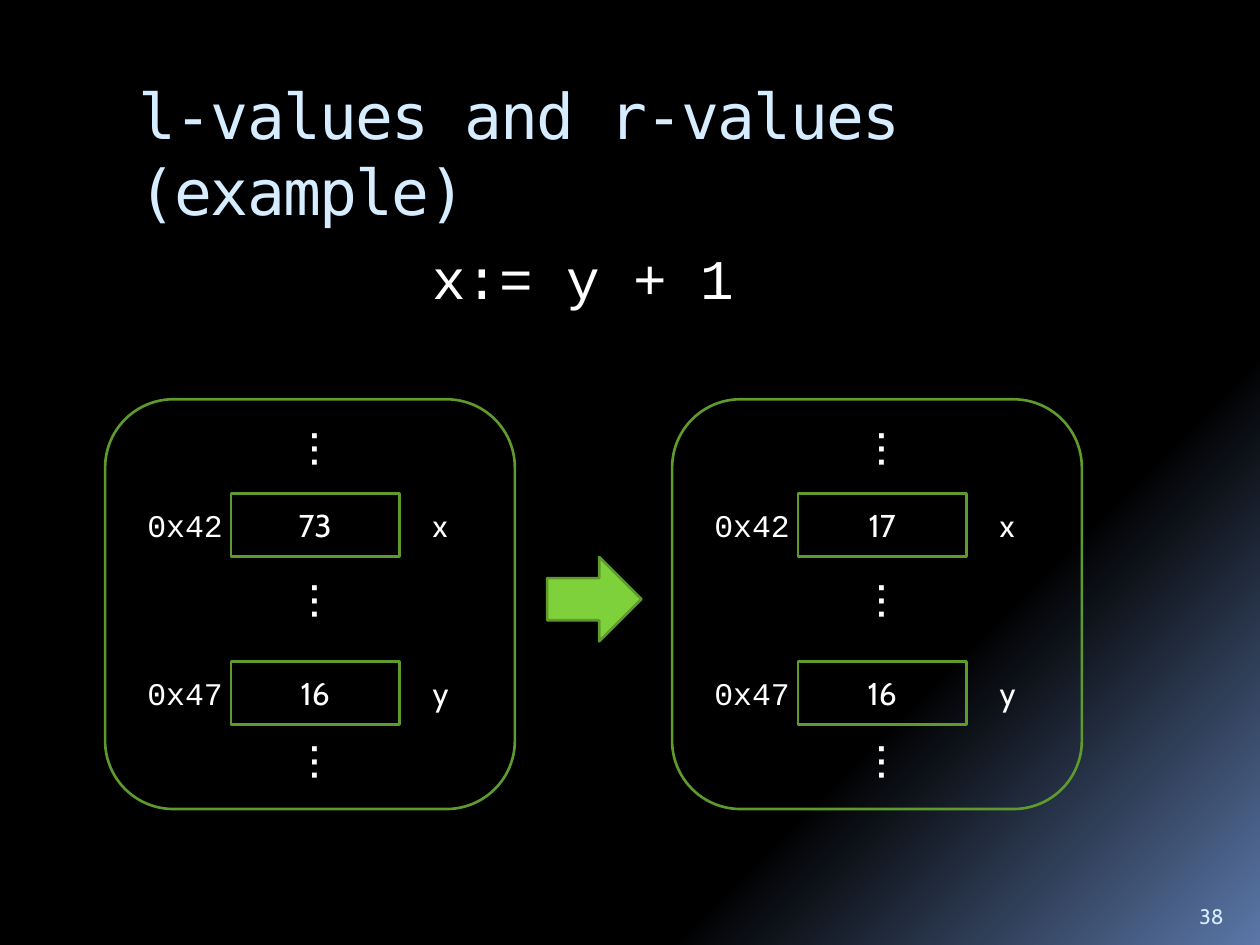
from copy import deepcopy
from dataclasses import dataclass

from pptx import Presentation
from pptx.dml.color import RGBColor
from pptx.enum.shapes import MSO_SHAPE
from pptx.enum.text import MSO_ANCHOR, MSO_AUTO_SIZE, PP_ALIGN
from pptx.oxml.ns import qn
from pptx.util import Cm, Pt


@dataclass(frozen=True)
class Theme:
    """Colours, fonts and type sizes of the slide."""
    white: str = "FFFFFF"
    pale: str = "D6ECFF"
    edge: str = "5E9B2C"
    lime: str = "7FD13B"
    glow: tuple = ((0.65, "000000"), (0.73, "000000"), (1, "5B77A8"))
    sans: str = "Cabin"
    code: str = "Courier New"
    head: str = "DejaVu Sans Mono"
    title: int = 36
    big: int = 32
    text: int = 18
    small: int = 12
    line: float = 1.5


LOOK = Theme()


def write(shape, text, font=LOOK.sans, size=LOOK.text, color=LOOK.white,
          align=PP_ALIGN.LEFT, anchor=MSO_ANCHOR.TOP, wrap=True, track=None):
    """Put formatted text into a shape."""
    frame = shape.text_frame
    frame.text = text
    frame.word_wrap = wrap
    frame.auto_size = MSO_AUTO_SIZE.NONE if wrap else MSO_AUTO_SIZE.SHAPE_TO_FIT_TEXT
    frame.vertical_anchor = anchor
    para = frame.paragraphs[0]
    para.alignment = align
    run = para.runs[0]
    run.font.name = font
    run.font.size = Pt(size)
    run.font.color.rgb = RGBColor.from_string(color)
    if track is not None:
        run.font._element.set("spc", str(track * 100))


def label(slide, box, text, turn=0, **style):
    """Add a text box at a box given in centimetres."""
    shape = slide.shapes.add_textbox(*map(Cm, box))
    shape.rotation = turn
    write(shape, text, **style)


def block(slide, kind, box, fill=None):
    """Add an outlined preset shape at a box given in centimetres."""
    shape = slide.shapes.add_shape(kind, *map(Cm, box))
    shape.shadow.inherit = False
    shape.line.color.rgb = RGBColor.from_string(LOOK.edge)
    shape.line.width = Pt(LOOK.line)
    if fill:
        shape.fill.solid()
        shape.fill.fore_color.rgb = RGBColor.from_string(fill)
    else:
        shape.fill.background()
    return shape


def backdrop(slide):
    """Fill the background with a diagonal glow."""
    fill = slide.background.fill
    fill.gradient()
    fill.gradient_angle = 315
    stops = slide.element.find(".//" + qn("a:gsLst"))
    stops.append(deepcopy(stops[0]))
    for stop, (place, color) in zip(fill.gradient_stops, LOOK.glow):
        stop.position = place
        stop.color.rgb = RGBColor.from_string(color)


def header(slide, box):
    """Place the title and the assignment below it."""
    left, top, width, height = box
    title = slide.shapes.title
    title.left, title.top, title.width, title.height = map(Cm, box)
    write(title, "l-values and r-values (example)", font=LOOK.head,
          size=LOOK.title, color=LOOK.pale, track=-1)
    label(slide, (left + 5.92, top + 3.36, 6.68, 1.63), "x:= y + 1",
          font=LOOK.code, size=LOOK.big, wrap=False)


def memory(slide, box, cells):
    """Draw one memory state with its addressed cells."""
    left, top, width, height = box
    block(slide, MSO_SHAPE.ROUNDED_RECTANGLE, box)
    for row, (place, value, name) in enumerate(cells):
        y = top + 1.9 + row * 3.39
        cell = block(slide, MSO_SHAPE.RECTANGLE, (left + 2.54, y, 3.39, 1.27))
        write(cell, value, align=PP_ALIGN.CENTER, anchor=MSO_ANCHOR.MIDDLE)
        label(slide, (left + 0.6, y + 0.12, 2.06, 1.02), place,
              font=LOOK.code, wrap=False)
        label(slide, (left + 6.35, y + 0.12, 0.81, 1.02), name, wrap=False)
    for drop in (0.28, 3.33, 6.58):
        label(slide, (left + 3.91, top + drop, 1.42, 1.63), "…", turn=90,
              size=LOOK.big, wrap=False)


def states(slide, box):
    """Show memory before and after, with an arrow between."""
    left, top, width, side = box
    for x, value in ((left, "73"), (left + width - side, "17")):
        memory(slide, (x, top, side, side),
               (("0x42", value, "x"), ("0x47", "16", "y")))
    block(slide, MSO_SHAPE.RIGHT_ARROW,
          (left + 8.91, top + 3.18, 1.9, 1.7), LOOK.lime)


def footer(slide, box):
    """Place the page number."""
    label(slide, box, "38", size=LOOK.small, color=LOOK.pale,
          anchor=MSO_ANCHOR.BOTTOM)


def main():
    """Build and save the slide."""
    deck = Presentation()
    deck.slide_width, deck.slide_height = Cm(25.4), Cm(19.05)
    slide = deck.slides.add_slide(deck.slide_layouts[5])
    backdrop(slide)
    header(slide, (2.54, 1.42, 21.59, 2.54))
    states(slide, (2.12, 8.05, 19.69, 8.26))
    footer(slide, (23.93, 17.83, 1.27, 1.02))
    deck.save("out.pptx")


if __name__ == "__main__":
    main()
